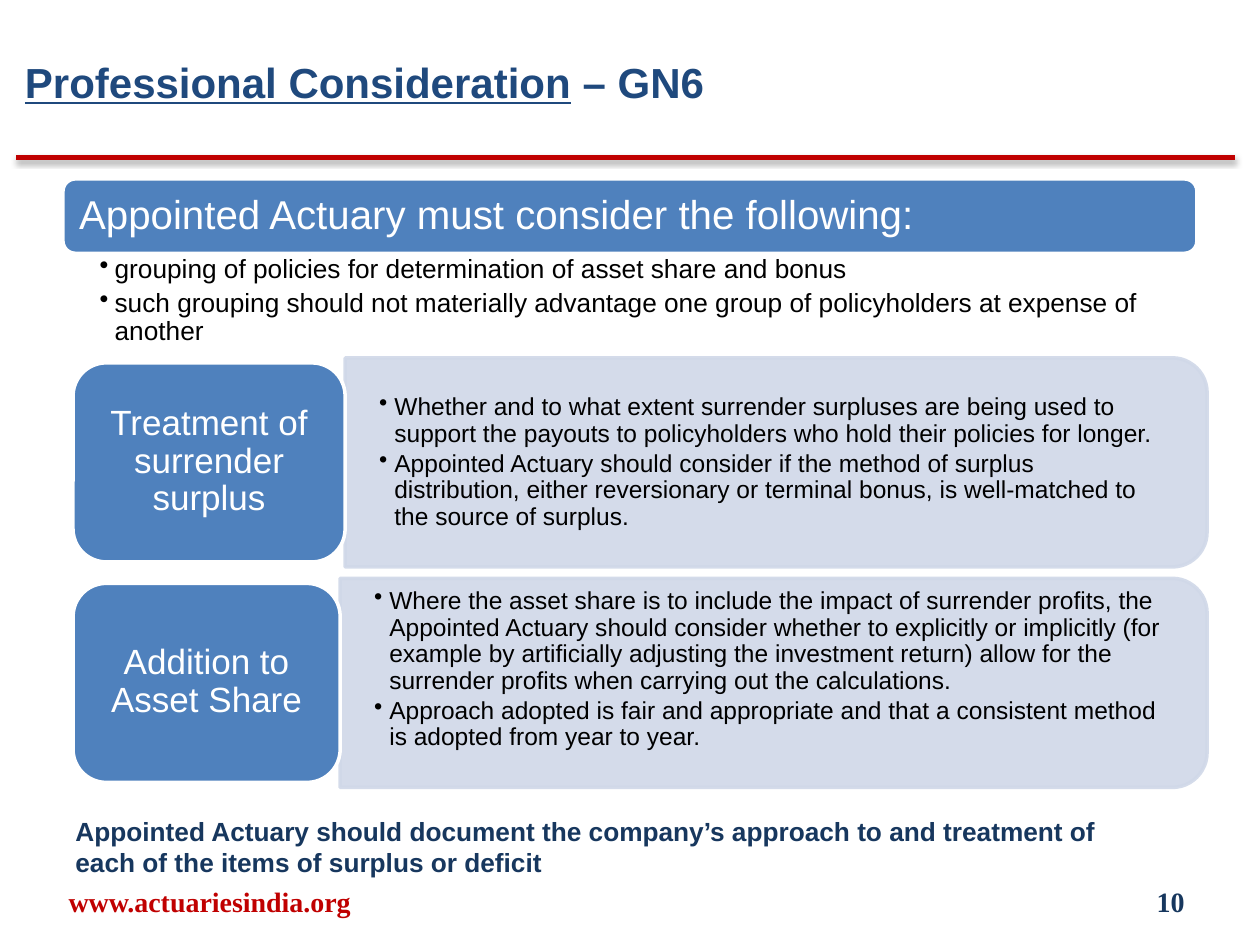
from pptx import Presentation
from pptx.dml.color import RGBColor
from pptx.enum.shapes import MSO_CONNECTOR as Connector, MSO_SHAPE as Shape
from pptx.enum.text import MSO_ANCHOR as Anchor, PP_ALIGN as Align
from pptx.oxml import parse_xml
from pptx.oxml.ns import nsdecls, qn
from pptx.util import Emu, Pt
from lxml.etree import SubElement

PX = 9144  # 100 px to the inch


class Theme:
    title, navy, red = "1F497D", "17375E", "C00000"
    blue, pale, white, black = "4F81BD", "D0D8E8", "FFFFFF", "000000"
    sans, serif = "Arial", "Times New Roman"
    title_size, header_size, label_size = 24, 23, 20
    body_size, panel_size, footer_size = 15, 14, 16
    outline = 2


def px(*values):
    return [Emu(value * PX) for value in values]


def rgb(value):
    return RGBColor.from_string(value)


def style(font, formats):
    """Set font attributes from a dict of format values."""
    for name, value in formats.items():
        if name == "color":
            font.color.rgb = rgb(value)
        else:
            setattr(font, name, value)


def text_font(size, color, name=Theme.sans, bold=False):
    return {"size": Pt(size), "color": color, "name": name, "bold": bold}


def add_text(slide, box, texts, font, anchor=Anchor.TOP, align=Align.LEFT,
             insets=(10, 5, 10, 5), spacing=None, after=0, bullets=False):
    """Add a wrapped text box; insets run left, top, right, bottom."""
    frame = slide.shapes.add_textbox(*px(*box)).text_frame
    left, top, right, bottom = px(*insets)
    frame_formats = {"word_wrap": True, "vertical_anchor": anchor,
                     "margin_left": left, "margin_top": top,
                     "margin_right": right, "margin_bottom": bottom}
    for name, value in frame_formats.items():
        setattr(frame, name, value)
    for index, text in enumerate(texts):
        paragraph = frame.add_paragraph() if index else frame.paragraphs[0]
        paragraph.alignment = align
        paragraph.space_after = Pt(after)
        if spacing:
            paragraph.line_spacing = spacing
        if bullets:
            properties = paragraph._p.get_or_add_pPr()
            properties.set("marL", str(12 * PX))
            properties.set("indent", str(-12 * PX))
            SubElement(properties, qn("a:buChar"), char="•")
        run = paragraph.add_run()
        run.text = text
        style(run.font, font)
    return frame


def add_block(slide, kind, box, fill, line, alpha=None):
    shape = slide.shapes.add_shape(kind, *px(*box))
    shape.shadow.inherit = False
    shape.fill.solid()
    shape.fill.fore_color.rgb = rgb(fill)
    shape.line.color.rgb = rgb(line)
    shape.line.width = Pt(Theme.outline)
    if alpha:
        for color in shape._element.spPr.iter(qn("a:srgbClr")):
            SubElement(color, qn("a:alpha"), val=str(alpha * 1000))
    return shape


def add_title(slide, box):
    left, top, width, height = box
    font = text_font(Theme.title_size, Theme.title, bold=True)
    frame = add_text(slide, box, ["Professional Consideration"],
                     {**font, "underline": True}, Anchor.MIDDLE)
    run = frame.paragraphs[0].add_run()
    run.text = " – GN6"
    style(run.font, font)
    # Rule with a soft shadow
    rule_y = top + 123
    rule = slide.shapes.add_connector(
        Connector.STRAIGHT, *px(left + 3, rule_y, left + 970, rule_y))
    rule.line.color.rgb = rgb(Theme.red)
    rule.line.width = Pt(3)
    rule._element.spPr.append(parse_xml(
        f'<a:effectLst {nsdecls("a")}><a:outerShdw blurRad="{Pt(3.1)}" '
        f'dist="{Pt(1.6)}" dir="5400000" rotWithShape="0">'
        '<a:srgbClr val="000000"><a:alpha val="38000"/></a:srgbClr>'
        '</a:outerShdw></a:effectLst>'))


def add_considerations(slide, box, heading, points):
    left, top, width, height = box
    bar = 59
    # Heading bar
    add_block(slide, Shape.ROUNDED_RECTANGLE, (left, top, width, bar),
              Theme.blue, Theme.white)
    add_text(slide, (left + 3, top + 3, width - 6, bar - 6), [heading],
             text_font(Theme.header_size, Theme.white), Anchor.MIDDLE,
             insets=(10, 10, 10, 10), spacing=0.9)
    # Points below the bar
    add_text(slide, (left, top + bar, width, height - bar), points,
             text_font(Theme.body_size, Theme.black),
             insets=(29, 2, 12, 2), spacing=0.9, after=3, bullets=True)


def add_topic(slide, box, label_width, label, points, anchor, insets):
    left, top, width, height = box
    panel_left, panel_width = left + label_width, width - label_width
    # Panel: a shape rounded at the top, turned to face right
    shift = (panel_width - height) // 2
    panel = add_block(slide, Shape.ROUND_2_SAME_RECTANGLE,
                      (panel_left + shift, top - shift, height, panel_width),
                      Theme.pale, Theme.pale, alpha=90)
    panel.rotation = 90
    add_text(slide, (panel_left, top + 8, panel_width - 8, height - 16), points,
             text_font(Theme.panel_size, Theme.black), anchor,
             insets=insets, spacing=0.9, after=2, bullets=True)
    # Label
    add_block(slide, Shape.ROUNDED_RECTANGLE,
              (left, top + 4, label_width, height - 8),
              Theme.blue, Theme.white)
    add_text(slide, (left + 8, top + 11, label_width - 16, height - 23), [label],
             text_font(Theme.label_size, Theme.white), Anchor.MIDDLE,
             Align.CENTER, insets=(8, 4, 8, 4), spacing=0.9)


def add_footer(slide, box):
    left, top, width, height = box
    parts = [("www.actuariesindia.org", left, 317, Theme.red, Align.CENTER),
             ("10", left + width - 233, 233, Theme.navy, Align.RIGHT)]
    for text, part_left, part_width, color, align in parts:
        add_text(slide, (part_left, top, part_width, height), [text],
                 text_font(Theme.footer_size, color, Theme.serif, True),
                 Anchor.MIDDLE, align)


def main():
    presentation = Presentation()
    presentation.slide_width, presentation.slide_height = px(1000, 750)
    slide = presentation.slides.add_slide(presentation.slide_layouts[6])

    add_title(slide, (10, 2, 900, 125))
    add_considerations(
        slide, (50, 142, 900, 133),
        "Appointed Actuary must consider the following:",
        ["grouping of policies for determination of asset share and bonus",
         "such grouping should not materially advantage one group of "
         "policyholders at expense of another"])
    add_topic(
        slide, (58, 284, 900, 166), 216, "Treatment of surrender surplus",
        ["Whether and to what extent surrender surpluses are being used to "
         "support the payouts to policyholders who hold their policies for longer.",
         "Appointed Actuary should consider if the method of surplus "
         "distribution, either reversionary or terminal bonus, is well-matched "
         "to the source of surplus."],
        Anchor.MIDDLE, (27, 14, 27, 14))
    add_topic(
        slide, (58, 459, 900, 166), 212, "Addition to Asset Share",
        ["Where the asset share is to include the impact of surrender profits, "
         "the Appointed Actuary should consider whether to explicitly or "
         "implicitly (for example by artificially adjusting the investment "
         "return) allow for the surrender profits when carrying out the "
         "calculations.",
         "Approach adopted is fair and appropriate and that a consistent method "
         "is adopted from year to year."],
        Anchor.TOP, (27, 0, 27, 0))
    # Closing statement
    add_text(slide, (50, 642, 881, 86),
             ["Appointed Actuary should document the company’s approach to and "
              "treatment of each of the items of surplus or deficit"],
             text_font(Theme.body_size, Theme.navy, bold=True))
    add_footer(slide, (8, 695, 942, 40))
    presentation.save("out.pptx")


if __name__ == "__main__":
    main()
